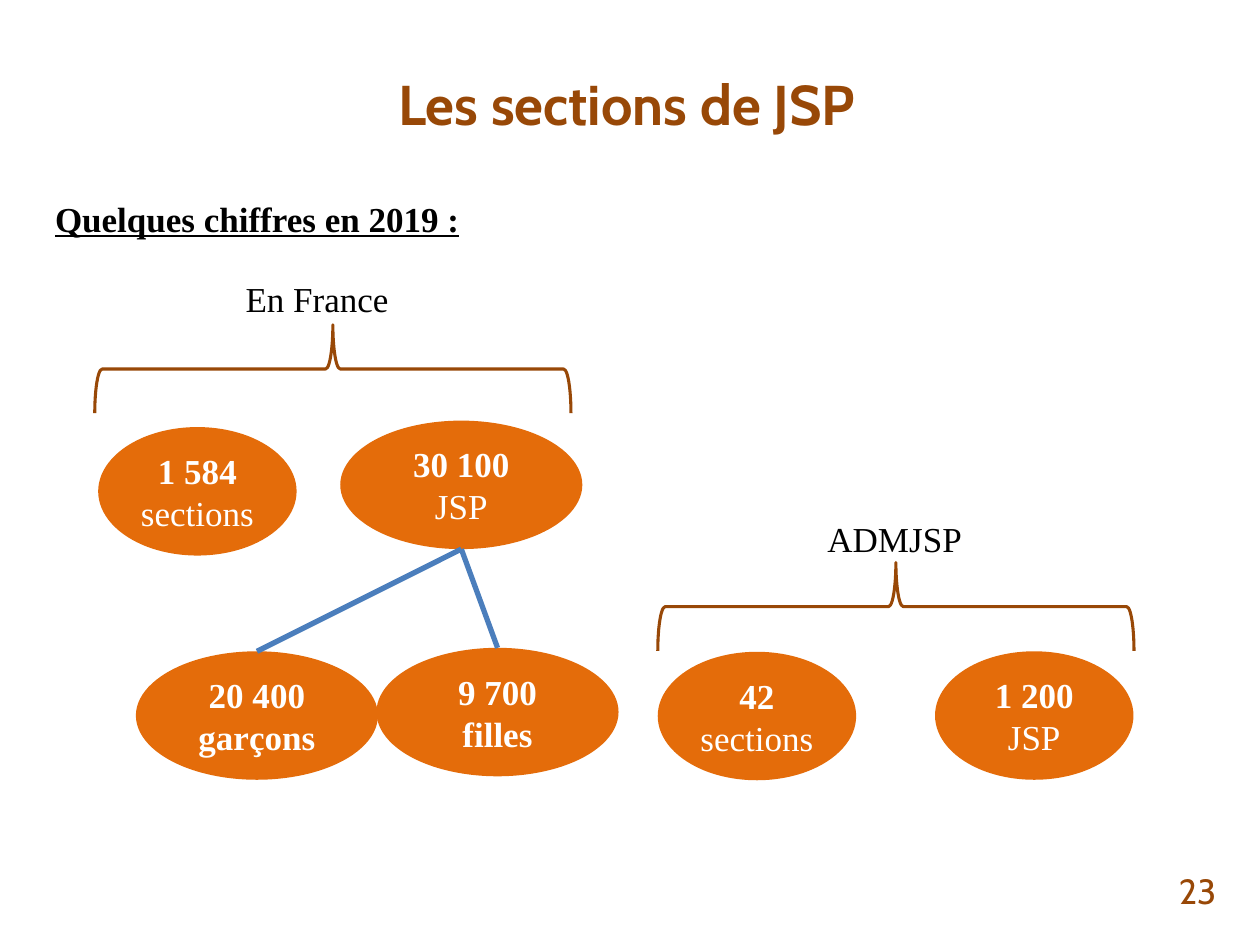
from lxml import etree
from pptx import Presentation
from pptx.dml.color import RGBColor
from pptx.enum.shapes import MSO_CONNECTOR, MSO_SHAPE
from pptx.enum.text import MSO_ANCHOR, PP_ALIGN
from pptx.oxml.ns import qn
from pptx.util import Cm, Pt

OVAL = MSO_SHAPE.OVAL
BRACE = MSO_SHAPE.LEFT_BRACE
LINE = MSO_CONNECTOR.STRAIGHT
LEFT, MID, RIGHT, JUST = PP_ALIGN.LEFT, PP_ALIGN.CENTER, PP_ALIGN.RIGHT, PP_ALIGN.JUSTIFY
TOP, CENTER = MSO_ANCHOR.TOP, MSO_ANCHOR.MIDDLE

HEAD, BODY = "Cabin", "Times New Roman"
BROWN, ORANGE, BLUE = "984807", "E46C0A", "4B7EBC"
BLACK, WHITE = "000000", "FFFFFF"


def tint(code):
    return RGBColor.from_string(code)


class Page:
    def __init__(self, slide):
        self.slide = slide
        self.shapes = slide.shapes

    def label(self, shape, runs, align, color, font=BODY, size=20, anchor=CENTER):
        frame = shape.text_frame
        frame.word_wrap = True
        frame.vertical_anchor = anchor
        para = frame.paragraphs[0]
        para.alignment = align
        for text, bold in runs:
            run = para.add_run()
            run.text = text
            run.font.name = font
            run.font.size = Pt(size)
            run.font.bold = bold
            run.font.color.rgb = tint(color)
        return para

    def title(self, text, x, y, w, h):
        shape = self.shapes.title
        shape.left, shape.top, shape.width, shape.height = Cm(x), Cm(y), Cm(w), Cm(h)
        self.label(shape, [(text, True)], MID, BROWN, HEAD, 32)

    def text(self, text, x, y, w, h, align=LEFT, color=BLACK, font=BODY, bold=False, anchor=TOP):
        box = self.shapes.add_textbox(Cm(x), Cm(y), Cm(w), Cm(h))
        return self.label(box, [(text, bold)], align, color, font, anchor=anchor)

    def oval(self, runs, x, y, w):
        shape = self.shapes.add_shape(OVAL, Cm(x), Cm(y), Cm(w), Cm(2.59))
        shape.shadow.inherit = False
        shape.fill.solid()
        shape.fill.fore_color.rgb = tint(ORANGE)
        shape.line.fill.background()
        self.label(shape, runs, MID, WHITE)
        return shape

    def brace(self, x, y, w=9.6, h=1.78):
        shift = (w - h) / 2
        shape = self.shapes.add_shape(BRACE, Cm(x + shift), Cm(y - shift), Cm(h), Cm(w))
        shape.rotation = 90
        shape.shadow.inherit = False
        shape.fill.background()
        shape.line.color.rgb = tint(BROWN)
        shape.line.width = Pt(1.75)

    def link(self, start, end):
        line = self.shapes.add_connector(
            LINE,
            start.left + start.width // 2, start.top + start.height,
            end.left + end.width // 2, end.top,
        )
        line.line.color.rgb = tint(BLUE)
        line.line.width = Pt(3)
        etree.SubElement(line._element.spPr, qn("a:effectLst"))


def main():
    deck = Presentation()
    deck.slide_width, deck.slide_height = Cm(25.4), Cm(19.05)
    page = Page(deck.slides.add_slide(deck.slide_layouts[5]))

    page.title("Les sections de JSP", 0.69, 0.76, 23.9, 2.62)
    page.text("23", 18.85, 17.45, 5.92, 1.02, RIGHT, BROWN, HEAD, anchor=CENTER)
    intro = page.text("Quelques chiffres en 2019 :", 0.86, 3.73, 9.53, 1.22, JUST, bold=True)
    intro.line_spacing = 1.15
    intro.space_after = Pt(8)
    intro.runs[0].font.underline = True

    for name, x, y, w in [("En France", 4.7, 5.46, 3.61), ("ADMJSP", 16.43, 10.31, 3.25)]:
        page.text(name, x, y, w, 1.09)
    for x, y in [(1.91, 6.55), (13.26, 11.34)]:
        page.brace(x, y)

    for count, unit, x, y in [
        ("1 584 ", "sections", 1.98, 8.61),
        ("42 ", "sections", 13.26, 13.14),
        ("1 200 ", "JSP", 18.85, 13.13),
    ]:
        page.oval([(count, True), (unit, False)], x, y, 4)

    total = page.oval([("30 100 ", True), ("JSP", False)], 6.86, 8.48, 4.88)
    for text, x, y in [("9 700 filles", 7.59, 13.06), ("20 400 garçons", 2.74, 13.13)]:
        page.link(total, page.oval([(text, True)], x, y, 4.88))

    deck.save("out.pptx")


if __name__ == "__main__":
    main()
